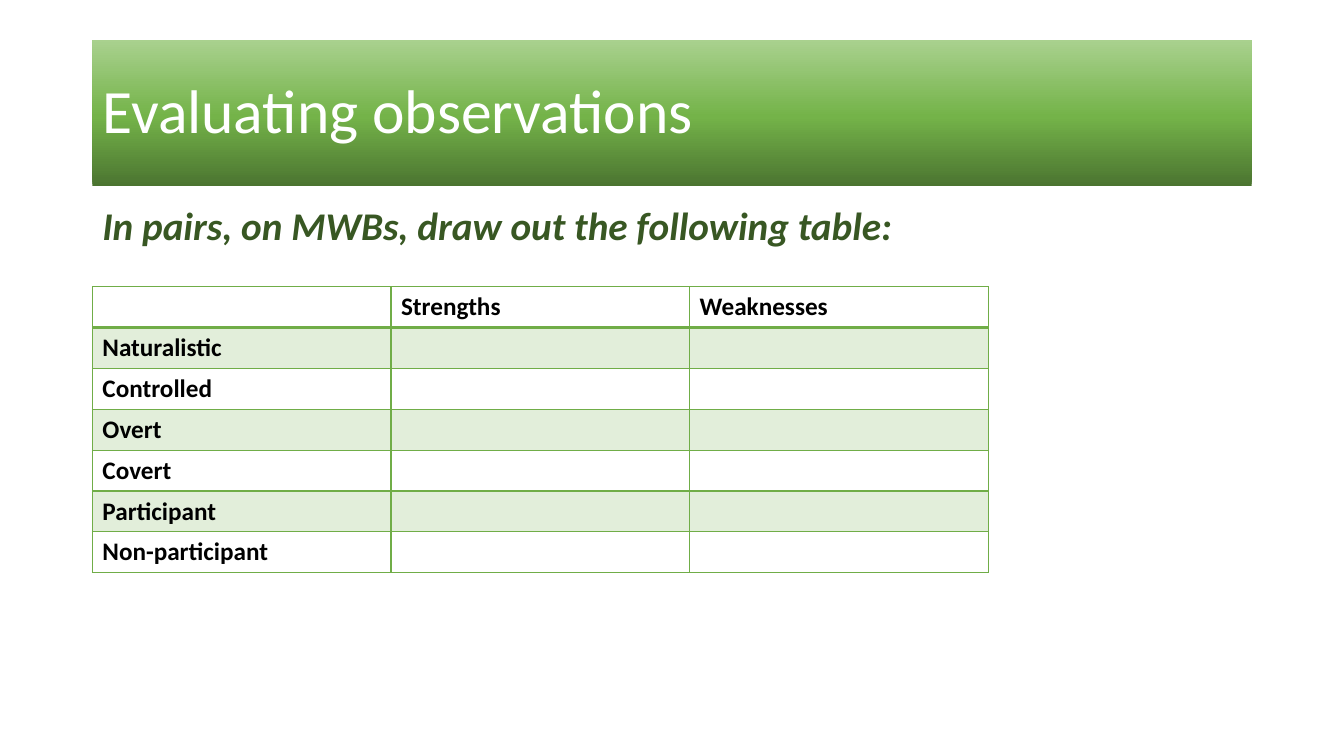
import copy
import pptx
import pptx.dml.color
import pptx.enum.text
import pptx.oxml
import pptx.oxml.ns
import pptx.util

Pt = pptx.util.Pt
qn = pptx.oxml.ns.qn

# Content
TITLE = "Evaluating observations"
TASK = "In pairs, on MWBs, draw out the following table:"
HEADS = ["", "Strengths", "Weaknesses"]
KINDS = ["Naturalistic", "Controlled", "Overt", "Covert",
         "Participant", "Non-participant"]
STOPS = [(0, "4B7430"), (0.48, "74B349"), (1, "A9D18E")]
GREEN = "70AD47"

# Layout in points
LEFT, WIDE = 66, 828
COL, ROW = 213.33, 29.2


def color(code):
    return pptx.dml.color.RGBColor.from_string(code)


def style(para, size, code, bold=False, slant=False):
    for run in para.runs:
        font = run.font
        font.name, font.size = "Calibri", Pt(size)
        font.bold, font.italic = bold, slant
        font.color.rgb = color(code)


def place(shape, top, high):
    shape.left, shape.top = Pt(LEFT), Pt(top)
    shape.width, shape.height = Pt(WIDE), Pt(high)


def border(cell, side, width):
    line = pptx.oxml.parse_xml(
        f'<a:ln{side} xmlns:a="http://schemas.openxmlformats.org/drawingml/2006/main"'
        f' w="{Pt(width)}"><a:solidFill><a:srgbClr val="{GREEN}"/></a:solidFill>'
        f'</a:ln{side}>')
    cell._tc.get_or_add_tcPr().append(line)


def tint(cell):
    cell.fill.solid()
    cell.fill.fore_color.rgb = color(GREEN)
    shade = cell._tc.tcPr.find(".//" + qn("a:solidFill") + "/" + qn("a:srgbClr"))
    fill = cell._tc.tcPr.find(qn("a:solidFill"))
    shade = fill.find(qn("a:srgbClr"))
    shade.append(shade.makeelement(qn("a:alpha"), {"val": "20000"}))


def main():
    deck = pptx.Presentation()
    deck.slide_width, deck.slide_height = Pt(960), Pt(540)
    slide = deck.slides.add_slide(deck.slide_layouts[5])

    # Title band with a three-stop gradient
    title = slide.shapes.title
    place(title, 28.75, 104.4)
    title.fill.gradient()
    title.fill.gradient_angle = 90
    stops = title._element.spPr.find(".//" + qn("a:gsLst"))
    stops.append(copy.deepcopy(stops[0]))
    for stop, (pos, code) in zip(title.fill.gradient_stops, STOPS):
        stop.position = pos
        stop.color.rgb = color(code)
    frame = title.text_frame
    frame.text = TITLE
    frame.auto_size = pptx.enum.text.MSO_AUTO_SIZE.NONE
    frame.vertical_anchor = pptx.enum.text.MSO_ANCHOR.MIDDLE
    para = frame.paragraphs[0]
    para.alignment = pptx.enum.text.PP_ALIGN.LEFT
    para.line_spacing = 0.9
    style(para, 44, "FFFFFF")

    # Task line
    task = slide.shapes.add_textbox(0, 0, 0, 0)
    place(task, 143.75, 342.6)
    task.text_frame.word_wrap = True
    task.text_frame.text = TASK
    para = task.text_frame.paragraphs[0]
    para.line_spacing, para.space_before = 0.9, Pt(10)
    style(para, 28, "385723", bold=True, slant=True)

    # Table
    rows = [HEADS] + [[kind, "", ""] for kind in KINDS]
    table = slide.shapes.add_table(
        len(rows), len(HEADS), Pt(LEFT), Pt(204.75),
        Pt(COL * len(HEADS)), Pt(ROW * len(rows))).table
    table.first_row = table.horz_banding = False
    for col in table.columns:
        col.width = Pt(COL)
    for r, row in enumerate(rows):
        table.rows[r].height = Pt(ROW)
        for c, text in enumerate(row):
            cell = table.cell(r, c)
            cell.text = text
            style(cell.text_frame.paragraphs[0], 18, "000000", bold=True)
            for side in "LRTB":
                heavy = (r, side) in [(0, "B"), (1, "T")]
                border(cell, side, 2 if heavy else 1)
            if r % 2:
                tint(cell)
            else:
                cell.fill.background()

    deck.save("out.pptx")


if __name__ == "__main__":
    main()
